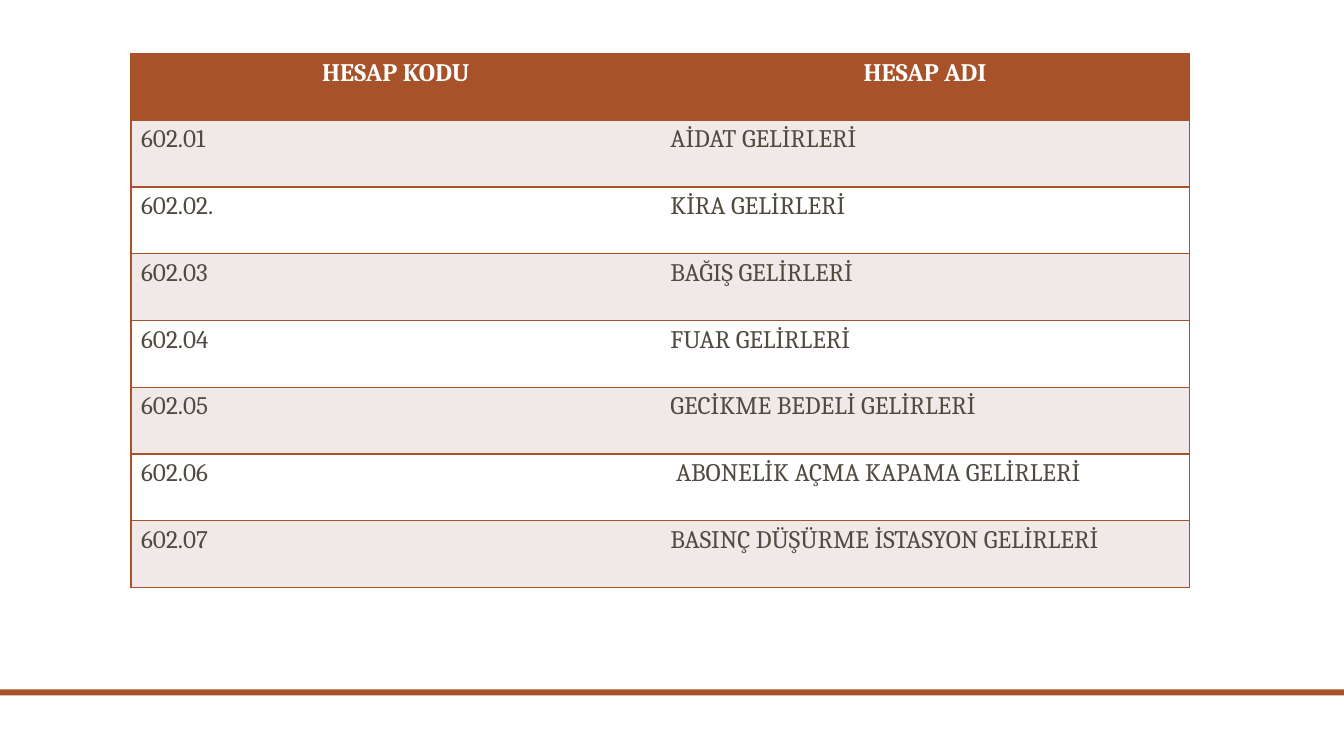
from lxml import etree
from pptx import Presentation
from pptx.dml.color import RGBColor
from pptx.enum.shapes import MSO_SHAPE
from pptx.enum.text import PP_ALIGN
from pptx.oxml.ns import qn
from pptx.util import Inches, Pt

RECTANGLE = MSO_SHAPE.RECTANGLE
CENTER, LEFT = PP_ALIGN.CENTER, PP_ALIGN.LEFT
COLORS = {"rust": "A85229", "blush": "F1E9E8", "white": "FFFFFF", "text": "514A40"}
ACCOUNTS = [
    ("HESAP KODU", "HESAP ADI"),
    ("602.01", "AİDAT GELİRLERİ"),
    ("602.02.", "KİRA GELİRLERİ"),
    ("602.03", "BAĞIŞ GELİRLERİ"),
    ("602.04", "FUAR GELİRLERİ"),
    ("602.05", "GECİKME BEDELİ GELİRLERİ"),
    ("602.06", " ABONELİK AÇMA KAPAMA GELİRLERİ"),
    ("602.07", "BASINÇ DÜŞÜRME İSTASYON GELİRLERİ"),
]


def paint(fill, color):
    fill.solid()
    fill.fore_color.rgb = RGBColor.from_string(COLORS[color])


def add_border(cell, side, visible):
    properties = cell._tc.get_or_add_tcPr()
    line = etree.SubElement(properties, qn(f"a:ln{side}"), w=str(Pt(1)))
    if visible:
        solid = etree.SubElement(line, qn("a:solidFill"))
        etree.SubElement(solid, qn("a:srgbClr"), val=COLORS["rust"])
    else:
        etree.SubElement(line, qn("a:noFill"))


deck = Presentation()
deck.slide_width, deck.slide_height = Inches(13.33), Inches(7.5)
page = deck.slides.add_slide(deck.slide_layouts[6])

footer_bar = page.shapes.add_shape(
    RECTANGLE, Inches(0), Inches(6.84), deck.slide_width, Inches(0.06))
footer_bar.shadow.inherit = False
paint(footer_bar.fill, "rust")
footer_bar.line.fill.background()

table = page.shapes.add_table(
    len(ACCOUNTS), 2, Inches(1.3), Inches(0.53), Inches(10.5), Inches(5.3)).table

for row, account in enumerate(ACCOUNTS):
    header = row == 0
    band = "rust" if header else "blush" if row % 2 else "white"
    for column, label in enumerate(account):
        cell = table.cell(row, column)
        for side, visible in (("L", column == 0), ("R", column == 1), ("T", True), ("B", True)):
            add_border(cell, side, visible)
        paint(cell.fill, band)
        cell.text_frame.text = label
        para = cell.text_frame.paragraphs[0]
        para.alignment = CENTER if header else LEFT
        font = para.runs[0].font
        font.name, font.size, font.bold = "Cambria", Pt(18), header
        font.color.rgb = RGBColor.from_string(COLORS["white" if header else "text"])

deck.save("out.pptx")
